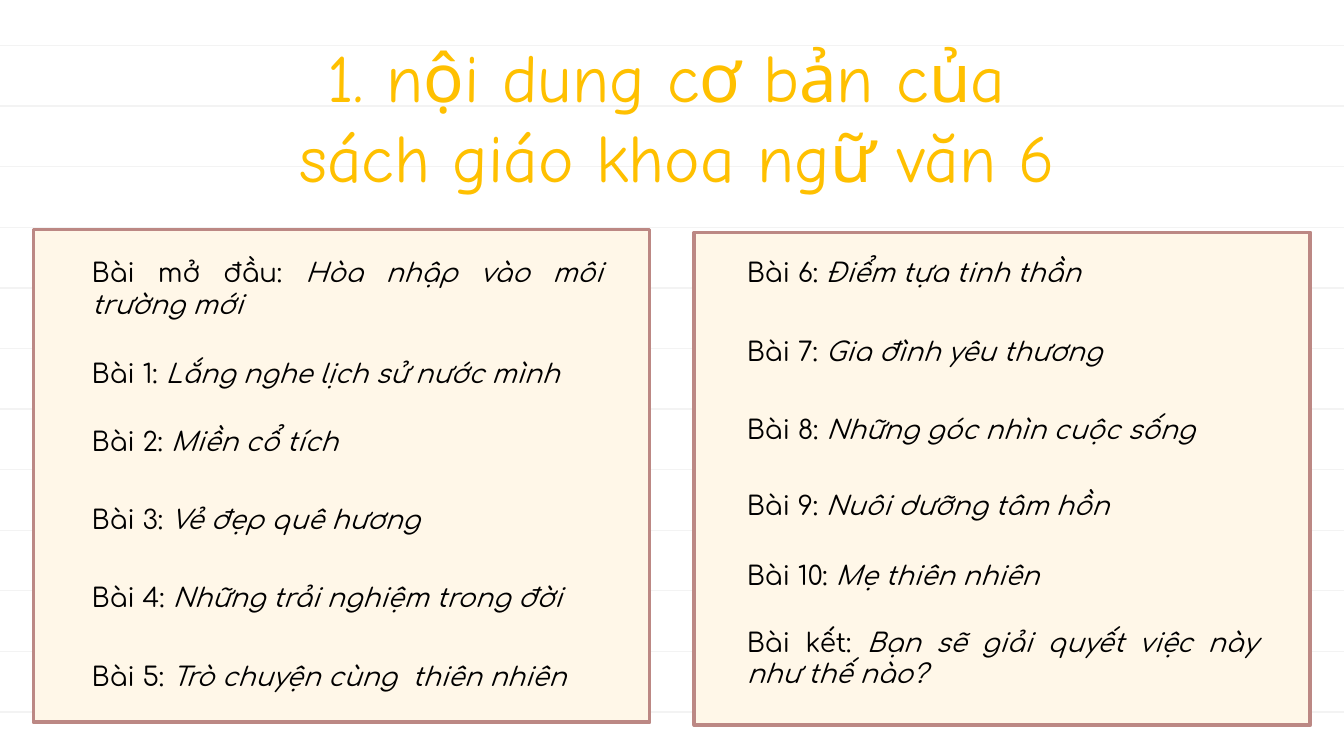
from dataclasses import dataclass

from lxml import etree
from pptx import Presentation
from pptx.dml.color import RGBColor
from pptx.enum.shapes import MSO_CONNECTOR, MSO_SHAPE
from pptx.enum.text import MSO_ANCHOR, PP_ALIGN
from pptx.oxml.ns import qn
from pptx.util import Pt

STRAIGHT = MSO_CONNECTOR.STRAIGHT
RECTANGLE = MSO_SHAPE.RECTANGLE
TOP, BOTTOM = MSO_ANCHOR.TOP, MSO_ANCHOR.BOTTOM
CENTER, JUSTIFY = PP_ALIGN.CENTER, PP_ALIGN.JUSTIFY

RULE_GREY = RGBColor(0xF3, 0xF3, 0xF3)
CREAM = RGBColor(0xFF, 0xF7, 0xE8)
ROSE = RGBColor(0xBC, 0x88, 0x84)
GOLD = RGBColor(0xFF, 0xC0, 0x00)
BLACK = RGBColor(0x00, 0x00, 0x00)

TITLE_FONT = "Comic Neue"
BODY_FONT = "Comfortaa"

PAGE_WIDTH, PAGE_HEIGHT = 720, 405
RULE_COUNT, RULE_TOP, RULE_STEP = 12, 24.4, 32.46
PANEL_WIDTH, PANEL_HEIGHT = 330, 264
LESSON_WIDTH, LESSON_HEIGHT = 288, 42
INSET = 7.2


@dataclass(frozen=True)
class Lesson:
    label: str
    name: str
    top: float


@dataclass(frozen=True)
class Panel:
    left: float
    top: float
    text_left: float
    lessons: tuple[Lesson, ...]


PANELS = (
    Panel(18, 123, 42, (
        Lesson("Bài mở đầu: ", "Hòa nhập vào môi trường mới", 130.3),
        Lesson("Bài 1: ", "Lắng nghe lịch sử nước mình", 184.3),
        Lesson("Bài 2: ", "Miền cổ tích", 220.5),
        Lesson("Bài 3: ", "Vẻ đẹp quê hương", 262.6),
        Lesson("Bài 4: ", "Những trải nghiệm trong đời", 304.5),
        Lesson("Bài 5: ", "Trò chuyện cùng  thiên nhiên", 346.5),
    )),
    Panel(372, 124.5, 393, (
        Lesson("Bài 6: ", "Điểm tựa tinh thần", 130.3),
        Lesson("Bài 7: ", "Gia đình yêu thương", 172.6),
        Lesson("Bài 8: ", "Những góc nhìn cuộc sống", 214.5),
        Lesson("Bài 9: ", "Nuôi dưỡng tâm hồn", 255),
        Lesson("Bài 10: ", "Mẹ thiên nhiên", 292.3),
        Lesson("Bài kết: ", "Bạn sẽ giải quyết việc này như thế nào?", 328.3),
    )),
)


def add_rule(page, top: float) -> None:
    """Draw one line of the ruled paper."""
    rule = page.shapes.add_connector(
        STRAIGHT, Pt(0), Pt(top), Pt(PAGE_WIDTH), Pt(top))
    rule.line.color.rgb = RULE_GREY
    rule.line.width = Pt(0.75)
    etree.SubElement(rule._element.spPr, qn("a:effectLst"))


def add_text(page, *spans: tuple[str, bool], left: float, top: float,
             width: float, height: float, font: str, size: float,
             color: RGBColor, align: PP_ALIGN, anchor: MSO_ANCHOR) -> None:
    """Add a one-paragraph box; each span is its text and an italic flag."""
    box = page.shapes.add_textbox(Pt(left), Pt(top), Pt(width), Pt(height))
    frame = box.text_frame
    frame.word_wrap = True
    frame.vertical_anchor = anchor
    frame.margin_left = frame.margin_right = Pt(INSET)
    frame.margin_top = frame.margin_bottom = Pt(INSET)
    para = frame.paragraphs[0]
    para.alignment = align
    for text, italic in spans:
        for index, line in enumerate(text.split("\n")):
            if index:
                para.add_line_break()
            span = para.add_run()
            span.text = line
            span.font.name = font
            span.font.size = Pt(size)
            span.font.italic = italic
            span.font.color.rgb = color


def add_panel(page, panel: Panel) -> None:
    """Draw a framed card and its list of lessons."""
    card = page.shapes.add_shape(
        RECTANGLE, Pt(panel.left), Pt(panel.top),
        Pt(PANEL_WIDTH), Pt(PANEL_HEIGHT))
    card.shadow.inherit = False
    card.fill.solid()
    card.fill.fore_color.rgb = CREAM
    card.line.color.rgb = ROSE
    card.line.width = Pt(2)
    for lesson in panel.lessons:
        add_text(page, (lesson.label, False), (lesson.name, True),
                 left=panel.text_left, top=lesson.top,
                 width=LESSON_WIDTH, height=LESSON_HEIGHT,
                 font=BODY_FONT, size=14, color=BLACK,
                 align=JUSTIFY, anchor=TOP)


def main() -> None:
    deck = Presentation()
    deck.slide_width, deck.slide_height = Pt(PAGE_WIDTH), Pt(PAGE_HEIGHT)
    page = deck.slides.add_slide(deck.slide_layouts[6])

    # Ruled paper
    for index in range(RULE_COUNT):
        add_rule(page, RULE_TOP + index * RULE_STEP)

    # Title
    add_text(page, ("1. nội dung cơ bản của \nsách giáo khoa ngữ văn 6", False),
             left=54, top=54.7, width=618, height=57.6,
             font=TITLE_FONT, size=36, color=GOLD,
             align=CENTER, anchor=BOTTOM)

    # Lesson panels
    for panel in PANELS:
        add_panel(page, panel)

    deck.save("out.pptx")


if __name__ == "__main__":
    main()
